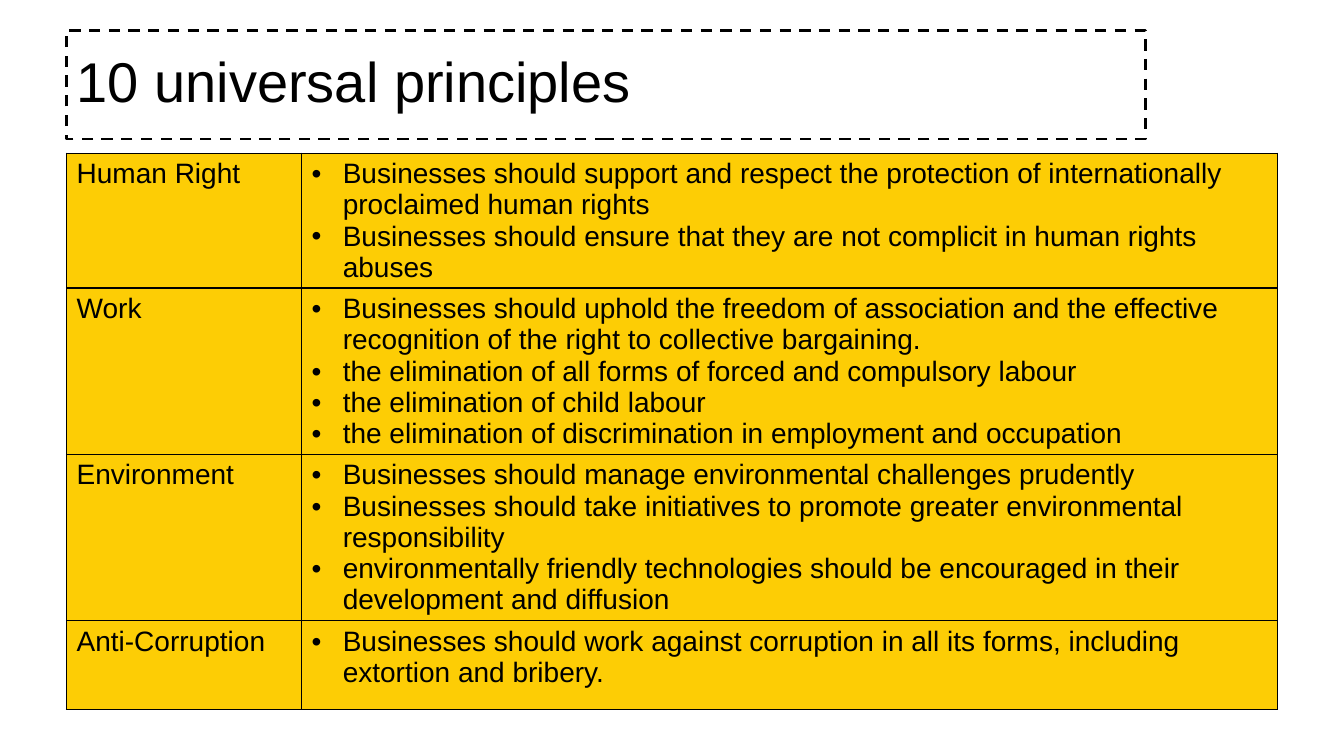
"""Build the slide listing the ten universal principles by theme."""
from lxml import etree
from pptx import Presentation
from pptx.dml.color import RGBColor
from pptx.enum import dml, text
from pptx.oxml import ns
from pptx.util import Inches, Pt

TITLE = "10 universal principles"
PRINCIPLES = [
    ("Human Right", 1.11, [
        "Businesses should support and respect the protection of internationally proclaimed human rights",
        "Businesses should ensure that they are not complicit in human rights abuses",
    ]),
    ("Work", 1.09, [
        "Businesses should uphold the freedom of association and the effective recognition of the right "
        "to collective bargaining.",
        "the elimination of all forms of forced and compulsory labour",
        "the elimination of child labour",
        "the elimination of discrimination in employment and occupation",
    ]),
    ("Environment", 1.42, [
        "Businesses should manage environmental challenges prudently",
        "Businesses should take initiatives to promote greater environmental responsibility",
        "environmentally friendly technologies should be encouraged in their development and diffusion",
    ]),
    ("Anti-Corruption", 0.88, [
        "Businesses should work against corruption in all its forms, including extortion and bribery.",
    ]),
]
COLUMNS = (2.33, 9.68)
LEFT, TABLE_TOP = 0.66, 1.52
INDENT = Inches(0.31)
FONT = "Arial"
BLACK = RGBColor(0, 0, 0)
GOLD = RGBColor(0xFD, 0xCD, 0x05)


def style(p, size):
    """Format the runs of a paragraph."""
    for r in p.runs:
        r.font.name, r.font.size, r.font.bold = FONT, Pt(size), False
        r.font.color.rgb = BLACK


def add_child(parent, tag, **attrs):
    """Append a drawing element with attributes."""
    return etree.SubElement(parent, ns.qn(tag), {k: str(v) for k, v in attrs.items()})


def add_bullet(p):
    """Give a paragraph a hanging round bullet."""
    pPr = p._p.get_or_add_pPr()
    pPr.set("marL", str(INDENT))
    pPr.set("indent", str(-INDENT))
    add_child(pPr, "a:buFont", typeface=FONT)
    add_child(pPr, "a:buChar", char="•")


def add_borders(cell, top, bottom):
    """Draw solid black borders around a cell."""
    tcPr = cell._tc.get_or_add_tcPr()
    for side, width in (("L", 1), ("R", 1), ("T", top), ("B", bottom)):
        ln = add_child(tcPr, f"a:ln{side}", w=Pt(width))
        add_child(add_child(ln, "a:solidFill"), "a:srgbClr", val=BLACK)


def fill_cell(cell, lines, bulleted, light):
    """Write the lines of a cell and colour it."""
    cell.text_frame.text = "\n".join(lines)
    for p in cell.text_frame.paragraphs:
        if bulleted:
            add_bullet(p)
        style(p, 20)
    cell.fill.solid()
    cell.fill.fore_color.rgb = GOLD
    if light:
        add_child(cell._tc.tcPr.find(".//" + ns.qn("a:solidFill"))[0], "a:alpha", val=60000)


def add_title(s):
    """Place the title in its dashed frame."""
    title = s.shapes.title
    title.left, title.top = Inches(LEFT), Inches(0.3)
    title.width, title.height = Inches(10.7), Inches(1.08)
    title.line.color.rgb = BLACK
    title.line.width = Pt(2)
    title.line.dash_style = dml.MSO_LINE.DASH
    tf = title.text_frame
    tf.text = TITLE
    tf.word_wrap = True
    tf.vertical_anchor = text.MSO_ANCHOR.MIDDLE
    p = tf.paragraphs[0]
    p.alignment = text.PP_ALIGN.LEFT
    p.line_spacing = 0.9
    style(p, 40)


def add_principles(s):
    """Build the table of principles."""
    height = sum(h for _, h, _ in PRINCIPLES)
    table = s.shapes.add_table(len(PRINCIPLES), len(COLUMNS), Inches(LEFT), Inches(TABLE_TOP),
                               Inches(sum(COLUMNS)), Inches(height)).table
    table.first_row = table.horz_banding = False
    for column, width in zip(table.columns, COLUMNS):
        column.width = Inches(width)
    for i, (theme, row_height, lines) in enumerate(PRINCIPLES):
        table.rows[i].height = Inches(row_height)
        for j, content in enumerate(([theme], lines)):
            cell = table.cell(i, j)
            add_borders(cell, top=2 if i == 1 else 1, bottom=2 if i == 0 else 1)
            fill_cell(cell, content, bulleted=j == 1, light=i % 2 == 1)


def main():
    """Create and save the presentation."""
    prs = Presentation()
    prs.slide_width, prs.slide_height = Inches(13.33), Inches(7.5)
    s = prs.slides.add_slide(prs.slide_layouts[5])
    add_principles(s)
    add_title(s)
    prs.save("out.pptx")


if __name__ == "__main__":
    main()
